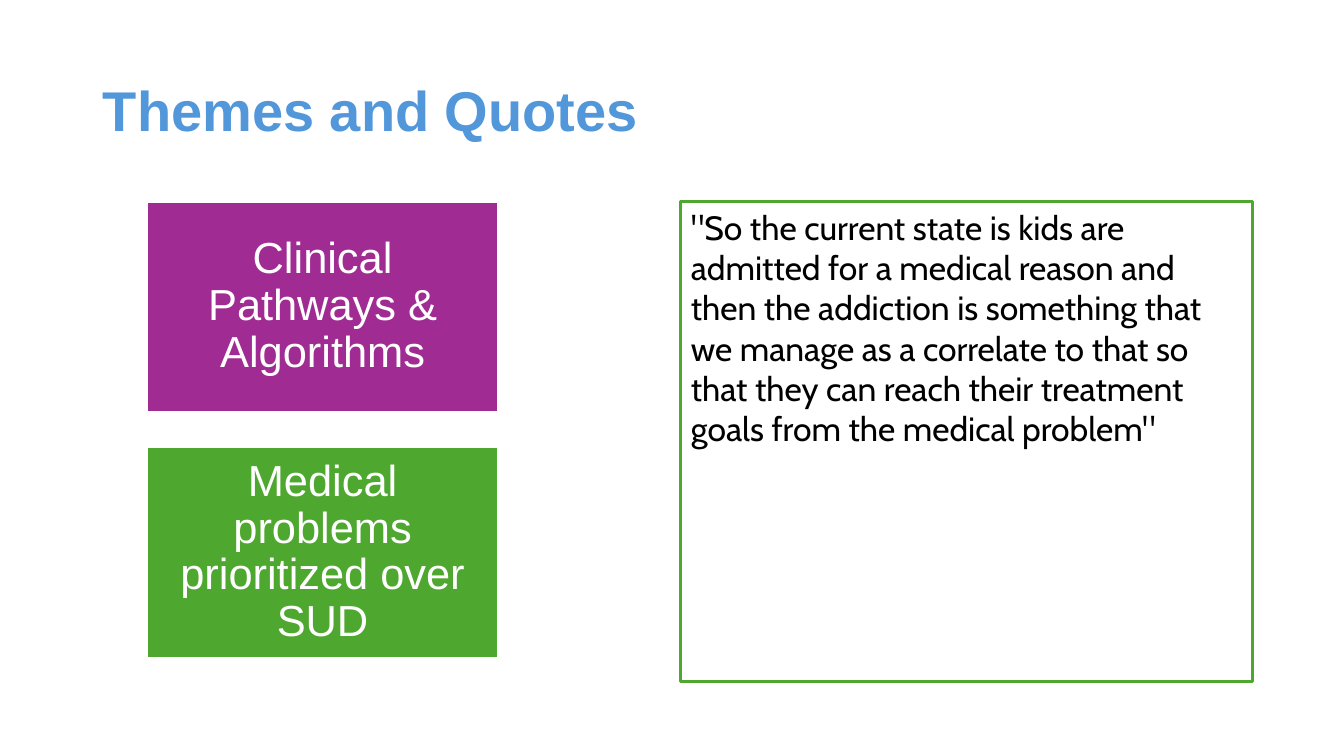
from pptx import Presentation
from pptx.dml.color import RGBColor
from pptx.enum.shapes import MSO_SHAPE as Preset
from pptx.enum.text import MSO_ANCHOR as Anchor, PP_ALIGN as Align
from pptx.util import Inches, Pt

SLIDE_WIDTH, SLIDE_HEIGHT = Inches(13.33), Inches(7.5)
COLUMN, ROW = SLIDE_WIDTH / 12, SLIDE_HEIGHT / 12
CONTENT_TOP = 3.2
THEME_STEP = 3.9
GREEN, PURPLE, BLUE = "4EA72E", "A02B93", "5197DA"
WHITE, BLACK = "FFFFFF", "000000"
THEMES = [
    ("Clinical Pathways & Algorithms", PURPLE),
    ("Medical problems prioritized over SUD", GREEN),
]
QUOTE = (
    '"So the current state is kids are admitted for a medical reason and '
    "then the addiction is something that we manage as a correlate to that "
    'so that they can reach their treatment goals from the medical problem"'
)


def color(value):
    """Turn a hex string into a colour."""
    return RGBColor.from_string(value)


def place(left, top, width, height):
    """Convert grid columns and rows to slide lengths."""
    return [round(length) for length in
            (left * COLUMN, top * ROW, width * COLUMN, height * ROW)]


def write(shape, text, size, font_name, font_color, anchor=Anchor.TOP,
          align=Align.LEFT, line_spacing=1.0, bold=False):
    """Fill a shape with one wrapped paragraph."""
    frame = shape.text_frame
    frame.word_wrap = True
    frame.vertical_anchor = anchor
    paragraph = frame.paragraphs[0]
    paragraph.text = text
    paragraph.alignment = align
    paragraph.line_spacing = line_spacing
    paragraph.font.size = Pt(size)
    paragraph.font.name = font_name
    paragraph.font.bold = bold
    paragraph.font.color.rgb = color(font_color)


def add_box(slide, box, line, line_width, fill=None):
    """Add an outlined rectangle, filled if a colour is given."""
    shape = slide.shapes.add_shape(Preset.RECTANGLE, *place(*box))
    shape.shadow.inherit = False
    shape.line.color.rgb = color(line)
    shape.line.width = Pt(line_width)
    if fill:
        shape.fill.solid()
        shape.fill.fore_color.rgb = color(fill)
    else:
        shape.fill.background()
    return shape


def add_title(slide, text):
    """Add the slide heading."""
    title = slide.shapes.add_textbox(*place(0.83, 0.64, 10.35, 2.32))
    write(title, text, 40, "Arial", BLUE, Anchor.MIDDLE,
          line_spacing=0.9, bold=True)


def add_theme(slide, index, text, fill):
    """Add one theme card to the left-hand stack."""
    top = CONTENT_TOP + index * THEME_STEP
    card = add_box(slide, (1.31, top, 3.14, 3.34), WHITE, 1.5, fill)
    frame = card.text_frame
    frame.margin_left = frame.margin_right = Inches(0.13)
    frame.margin_top = frame.margin_bottom = Inches(0.13)
    write(card, text, 31, "Arial", WHITE, Anchor.MIDDLE, Align.CENTER, 0.9)


def add_quote(slide, text):
    """Add the framed quote on the right."""
    quote = add_box(slide, (6.08, CONTENT_TOP, 5.1, 7.62), GREEN, 2.25)
    write(quote, text, 24, "Cabin", BLACK)


def main():
    """Build and save the slide."""
    presentation = Presentation()
    presentation.slide_width = SLIDE_WIDTH
    presentation.slide_height = SLIDE_HEIGHT
    slide = presentation.slides.add_slide(presentation.slide_layouts[6])
    add_title(slide, "Themes and Quotes")
    for index, (text, fill) in enumerate(THEMES):
        add_theme(slide, index, text, fill)
    add_quote(slide, QUOTE)
    presentation.save("out.pptx")


if __name__ == "__main__":
    main()
